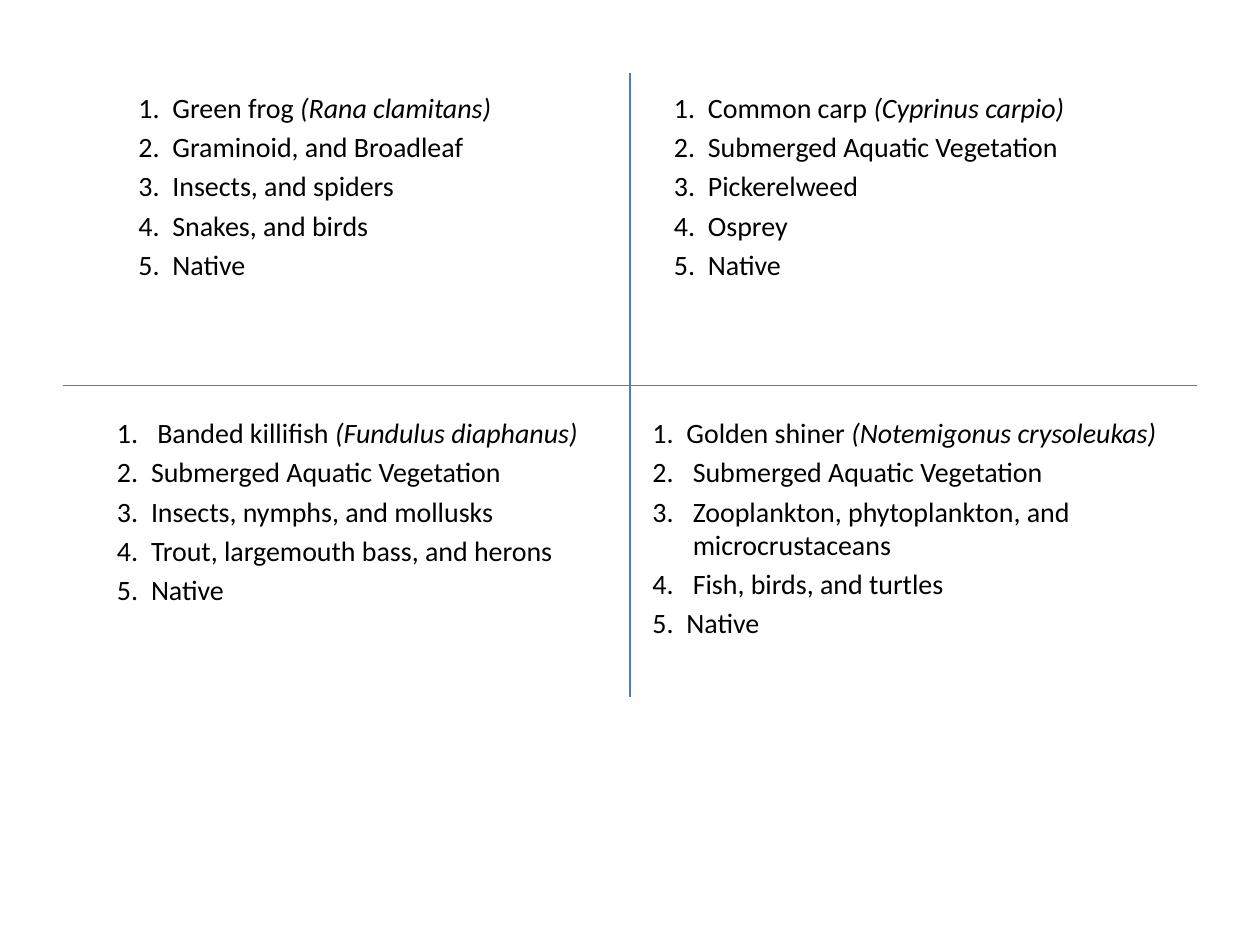
"""Build a four-quadrant slide of species fact lists."""
from lxml import etree
from pptx import Presentation, util as u
from pptx.dml.color import RGBColor
from pptx.enum import shapes, text
from pptx.oxml.ns import qn

BLACK = RGBColor(0, 0, 0)
BLUE = RGBColor(0x4B, 0x7E, 0xBC)
W, H = 10, 7.5
INDENT, WIDE_INDENT = 0.27, 0.32
ROW_TOPS = (0.67, 3.25)

QUADRANTS = [
    dict(row=0, left=1, size=(3.11, 1.66), species=("Green frog ", "(Rana clamitans)"),
         facts=["Graminoid, and Broadleaf", "Insects, and spiders", "Snakes, and birds", "Native"]),
    dict(row=0, left=5.25, size=(3.39, 1.66), species=("Common carp ", "(Cyprinus carpio)"),
         facts=["Submerged Aquatic Vegetation", "Pickerelweed", "Osprey", "Native"]),
    dict(row=1, left=0.83, size=(3.95, 1.66), species=("Banded killifish ", "(Fundulus diaphanus)"),
         facts=["Submerged Aquatic Vegetation", "Insects, nymphs, and mollusks",
                "Trout, largemouth bass, and herons", "Native"], wide=(0,)),
    dict(row=1, left=5.08, size=(4.67, 1.93), species=("Golden shiner ", "(Notemigonus crysoleukas)"),
         facts=["Submerged Aquatic Vegetation", "Zooplankton, phytoplankton, and microcrustaceans",
                "Fish, birds, and turtles", "Native"], wide=(1, 2, 3)),
]
DIVIDERS = [(W / 2, 0.58, W / 2, 5.53), (0.5, 3.06, W - 0.5, 3.06)]


def add_item(p, words, latin="", indent=INDENT, before=0, size=16, color=BLACK):
    """Fill one numbered paragraph, with an optional italic ending."""
    pPr = p._p.get_or_add_pPr()
    pPr.set("marL", str(u.Inches(indent)))
    pPr.set("indent", str(-u.Inches(indent)))
    p.space_before = u.Pt(before)
    etree.SubElement(pPr, qn("a:buFont"), typeface="+mj-lt")
    etree.SubElement(pPr, qn("a:buAutoNum"), type="arabicPeriod")
    p.alignment = text.PP_ALIGN.LEFT
    for part, italic in ((words, False), (latin, True)):
        if part:
            r = p.add_run()
            r.text = part
            r.font.name, r.font.size = "Calibri", u.Pt(size)
            r.font.italic = italic
            r.font.color.rgb = color


def add_quadrant(s, row, left, size, species, facts, wide=()):
    """Place one species list."""
    sp = s.shapes.add_textbox(*map(u.Inches, (left, ROW_TOPS[row], *size)))
    tf = sp.text_frame
    tf.word_wrap = True
    for i, item in enumerate([species] + [(fact,) for fact in facts]):
        p = tf.add_paragraph() if i else tf.paragraphs[0]
        add_item(p, *item, indent=WIDE_INDENT if i in wide else INDENT, before=3.2 if i else 0)


def main():
    """Draw the dividers and the lists."""
    prs = Presentation()
    prs.slide_width, prs.slide_height = u.Inches(W), u.Inches(H)
    s = prs.slides.add_slide(prs.slide_layouts[6])
    for ends in DIVIDERS:
        line = s.shapes.add_connector(shapes.MSO_CONNECTOR.STRAIGHT, *map(u.Inches, ends))
        line.line.color.rgb = BLUE
        line.line.width = u.Pt(0.75)
        etree.SubElement(line._element.spPr, qn("a:effectLst"))
    for quadrant in QUADRANTS:
        add_quadrant(s, **quadrant)
    prs.save("out.pptx")


if __name__ == "__main__":
    main()
